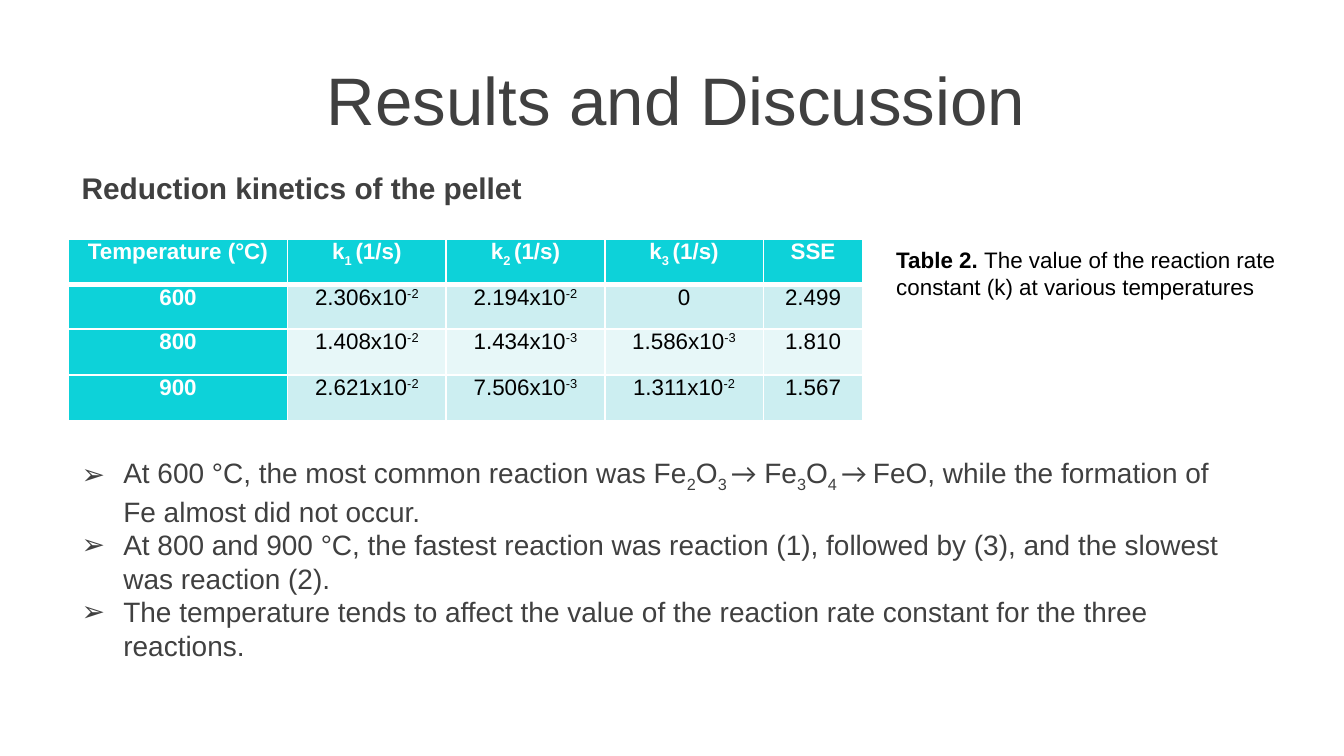
from dataclasses import dataclass

from lxml import etree
from pptx import Presentation, util as u
from pptx.dml.color import RGBColor
from pptx.enum import text
from pptx.oxml import ns

PX = u.Inches(1) // 100
LEFT = 51
BASELINES = {"_": "-25000", "^": "30000"}


@dataclass(frozen=True)
class Theme:
    """Colours, fonts and type sizes."""
    ink: str = "404040"
    black: str = "000000"
    white: str = "FFFFFF"
    accent: str = "0DD2D9"
    bands: tuple = ("CCEEF1", "E7F7F8")
    font: str = "Arial"
    arrow_font: str = "Calibri"
    title: int = 36
    heading: int = 16
    body: int = 15
    small: int = 12


def write(p, marked, *, size, color, theme, bold=False, align=None):
    """Write runs split at |, led by _ for sub, ^ for super, * for bold."""
    p.alignment = align
    for part in marked.split("|"):
        mark = part[0] if part[0] in "_^*" else ""
        r = p.add_run()
        r.text = part[len(mark):]
        r.font.name = theme.arrow_font if part[0] == "→" else theme.font
        r.font.size = u.Pt(size)
        r.font.bold = bold or mark == "*"
        r.font.color.rgb = RGBColor.from_string(color)
        if mark in BASELINES:
            r._r.get_or_add_rPr().set("baseline", BASELINES[mark])


class Deck:
    """Holds the theme and the current slide."""

    def __init__(self, prs, theme):
        """Add a blank slide."""
        self.theme = theme
        self.s = prs.slides.add_slide(prs.slide_layouts[6])

    def box(self, x, y, w, h, paragraphs, *, middle=True, grow=True, bullet=None, **fmt):
        """Add a text box with one paragraph per entry."""
        sp = self.s.shapes.add_textbox(*(v * PX for v in (x, y, w, h)))
        tf = sp.text_frame
        tf.word_wrap = True
        tf.auto_size = (text.MSO_AUTO_SIZE.SHAPE_TO_FIT_TEXT if grow
                        else text.MSO_AUTO_SIZE.NONE)
        tf.vertical_anchor = text.MSO_ANCHOR.MIDDLE if middle else text.MSO_ANCHOR.TOP
        for i, line in enumerate(paragraphs):
            p = tf.add_paragraph() if i else tf.paragraphs[0]
            if bullet:
                self.bullet(p, bullet)
            write(p, line, theme=self.theme, **fmt)

    def bullet(self, p, char, indent=31):
        """Give a paragraph a hanging bullet."""
        pPr = p._p.get_or_add_pPr()
        pPr.set("marL", str(indent * PX))
        pPr.set("indent", str(-indent * PX))
        etree.SubElement(pPr, ns.qn("a:buFont"), typeface=self.theme.font)
        etree.SubElement(pPr, ns.qn("a:buChar"), char=char)

    def borders(self, cell, **widths):
        """Draw white cell borders with widths in points."""
        tcPr = cell._tc.get_or_add_tcPr()
        for side in "LRTB":
            ln = etree.SubElement(tcPr, ns.qn(f"a:ln{side}"), w=str(u.Pt(widths.get(side, 1))))
            fill = etree.SubElement(ln, ns.qn("a:solidFill"))
            etree.SubElement(fill, ns.qn("a:srgbClr"), val=self.theme.white)

    def table(self, x, y, widths, heights, rows):
        """Add a table with accent header row and column and banded body."""
        t = self.theme
        tbl = self.s.shapes.add_table(len(rows), len(widths), x * PX, y * PX,
                                      sum(widths) * PX, sum(heights) * PX).table
        for col, w in zip(tbl.columns, widths):
            col.width = w * PX
        for i, (row, h) in enumerate(zip(rows, heights)):
            tbl.rows[i].height = h * PX
            for j, value in enumerate(row):
                cell = tbl.cell(i, j)
                head = i == 0 or j == 0
                cell.margin_left = cell.margin_right = 7 * PX
                cell.margin_top = cell.margin_bottom = 0
                self.borders(cell, B=3 if i == 0 else 1, T=3 if i == 1 else 1)
                cell.fill.solid()
                cell.fill.fore_color.rgb = RGBColor.from_string(
                    t.accent if head else t.bands[(i - 1) % 2])
                write(cell.text_frame.paragraphs[0], value, size=t.small, bold=head,
                      color=t.white if head else t.black, theme=t,
                      align=text.PP_ALIGN.CENTER)


def main():
    """Build the slide and save it."""
    prs = Presentation()
    prs.slide_width = u.Inches(10)
    prs.slide_height = prs.slide_width * 9 // 16
    t = Theme()
    d = Deck(prs, t)
    d.box(3, 42, 1000, 63, ["Results and Discussion"], grow=False, size=t.title,
          color=t.ink, align=text.PP_ALIGN.CENTER)
    d.box(LEFT, 121, 884, 37, ["Reduction kinetics of the pellet"],
          size=t.heading, color=t.ink, bold=True)
    d.box(LEFT, 335, 884, 162, [
        "At 600 °C, the most common reaction was Fe|_2|O|_3 |→| Fe|_3|O|_4 |→ |"
        "FeO, while the formation of Fe almost did not occur.",
        "At 800 and 900 °C, the fastest reaction was reaction (1), followed by (3), "
        "and the slowest was reaction (2).",
        "The temperature tends to affect the value of the reaction rate constant "
        "for the three reactions.",
    ], bullet="➢", size=t.body, color=t.ink)
    d.box(657, 178, 315, 50, [
        "*Table 2. |The value of the reaction rate constant (k) at various temperatures",
    ], middle=False, size=t.small, color=t.black)
    d.table(LEFT, 178, [163, 118, 118, 118, 74], [34, 33, 34, 34], [
        ["Temperature (°C)", *(f"k|_{n} |(1/s)" for n in (1, 2, 3)), "SSE"],
        ["600", "2.306x10|^-2", "2.194x10|^-2", "0", "2.499"],
        ["800", "1.408x10|^-2", "1.434x10|^-3", "1.586x10|^-3", "1.810"],
        ["900", "2.621x10|^-2", "7.506x10|^-3", "1.311x10|^-2", "1.567"],
    ])
    prs.save("out.pptx")


if __name__ == "__main__":
    main()
